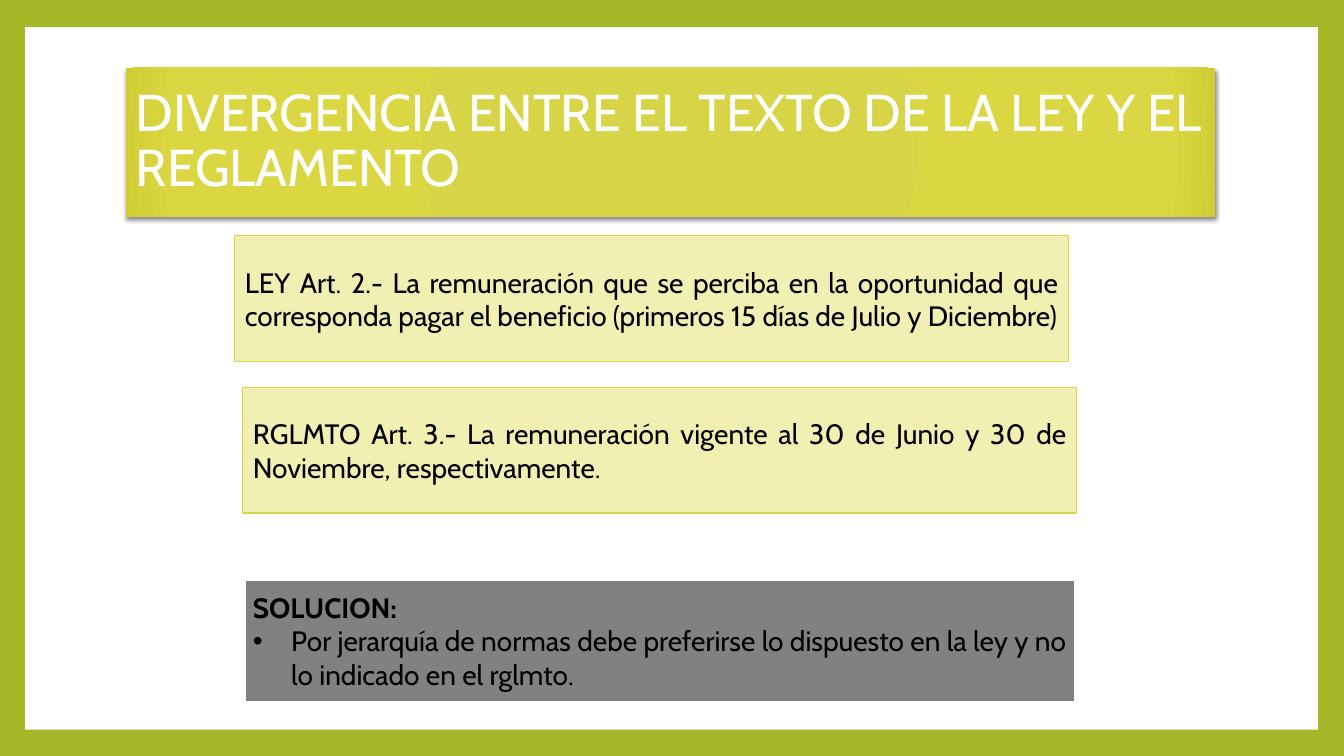
from lxml import etree
from pptx import Presentation
from pptx import util as u
from pptx.dml.color import RGBColor
from pptx.enum import shapes, text
from pptx.oxml import parse_xml
from pptx.oxml.ns import nsdecls, qn

PX = 9144


def px(n):
    """Turn px (100 to the inch) into EMU."""
    return u.Emu(n * PX)


def rgb(value):
    """Turn a hex string into a colour."""
    return RGBColor.from_string(value)


def write(p, content, size=20, color="000000", bold=False, font="Cabin"):
    """Add a formatted run to a paragraph."""
    r = p.add_run()
    r.text = content
    r.font.name = font
    r.font.size = u.Pt(size)
    r.font.bold = bold
    r.font.color.rgb = rgb(color)
    return r


class Deck:
    """Holds the style and the current slide."""

    green, lime, pale, gray, white = "A6B727", "D7D447", "F1F0B2", "818183", "FFFFFF"
    title_stops = ((0, lime), (90, "DBD743"), (100, "D0CD33"))

    def __init__(self):
        """Start a presentation with one blank slide."""
        self.prs = Presentation()
        self.prs.slide_width, self.prs.slide_height = px(1333), px(750)
        self.s = self.prs.slides.add_slide(self.prs.slide_layouts[6])
        fill = self.s.background.fill
        fill.solid()
        fill.fore_color.rgb = rgb(self.green)

    def rect(self, x, y, w, h, fill=None, line=None, width=0.79):
        """Add a flat rectangle."""
        sp = self.s.shapes.add_shape(shapes.MSO_SHAPE.RECTANGLE, px(x), px(y), px(w), px(h))
        sp.shadow.inherit = False
        if fill:
            sp.fill.solid()
            sp.fill.fore_color.rgb = rgb(fill)
        if line:
            sp.line.color.rgb = rgb(line)
            sp.line.width = u.Pt(width)
        else:
            sp.line.fill.background()
        tf = sp.text_frame
        tf.word_wrap = True
        tf.vertical_anchor = text.MSO_ANCHOR.MIDDLE
        return sp

    def title(self, content, x, y, w, h):
        """Add the title banner with its radial gradient and shadow."""
        sp = self.rect(x, y, w, h)
        stops = "".join(
            f'<a:gs pos="{pos * 1000}"><a:srgbClr val="{c}"/></a:gs>' for pos, c in self.title_stops)
        grad = parse_xml(
            f'<a:gradFill {nsdecls("a")} rotWithShape="1"><a:gsLst>{stops}</a:gsLst>'
            '<a:path path="circle"><a:fillToRect l="100000" t="100000" r="100000" b="100000"/>'
            '</a:path></a:gradFill>')
        pr = sp.element.spPr
        pr.find(qn("a:prstGeom")).addnext(grad)
        pr.find(qn("a:effectLst")).append(parse_xml(
            f'<a:outerShdw {nsdecls("a")} blurRad="{u.Pt(3)}" dist="{u.Pt(2)}" dir="5400000" '
            'rotWithShape="0"><a:srgbClr val="000000"><a:alpha val="45000"/></a:srgbClr></a:outerShdw>'))
        p = sp.text_frame.paragraphs[0]
        p.alignment = text.PP_ALIGN.LEFT
        p.line_spacing = 0.9
        write(p, content, size=37, color=self.white)

    def box(self, content, x, y, **style):
        """Add a box with one justified paragraph."""
        sp = self.rect(x, y, 827, 125, **style)
        p = sp.text_frame.paragraphs[0]
        p.alignment = text.PP_ALIGN.JUSTIFY
        return sp, write(p, content)

    def solution(self, heading, point, x, y):
        """Add the solution box with a bold heading and a bullet."""
        sp, r = self.box(heading, x, y, fill=self.gray, line=self.white, width=4.25)
        r.font.bold = True
        p = sp.text_frame.add_paragraph()
        p.alignment = text.PP_ALIGN.JUSTIFY
        pr = p._p.get_or_add_pPr()
        pr.set("marL", str(px(38)))
        pr.set("indent", str(-px(38)))
        etree.SubElement(pr, qn("a:buFont")).set("typeface", "Arial")
        etree.SubElement(pr, qn("a:buChar")).set("char", "•")
        write(p, point)


def main():
    """Build and save the slide."""
    d = Deck()
    d.rect(25, 27, 1282, 697, fill=d.white)
    d.title("DIVERGENCIA ENTRE EL TEXTO DE LA LEY Y EL REGLAMENTO", 125, 67, 1080, 148)
    articles = (
        (233, 234, "LEY Art. 2.- La remuneración que se perciba en la oportunidad que "
                   "corresponda pagar el beneficio (primeros 15 días de Julio y Diciembre)"),
        (241, 384, "RGLMTO Art. 3.- La remuneración vigente al 30 de Junio y 30 de "
                   "Noviembre, respectivamente."),
    )
    for x, y, content in articles:
        d.box(content, x, y, fill=d.pale, line=d.lime)
    d.solution("SOLUCION:", "Por jerarquía de normas debe preferirse lo dispuesto en la ley "
               "y no lo indicado en el rglmto.", 241, 573)
    d.prs.save("out.pptx")


if __name__ == "__main__":
    main()
